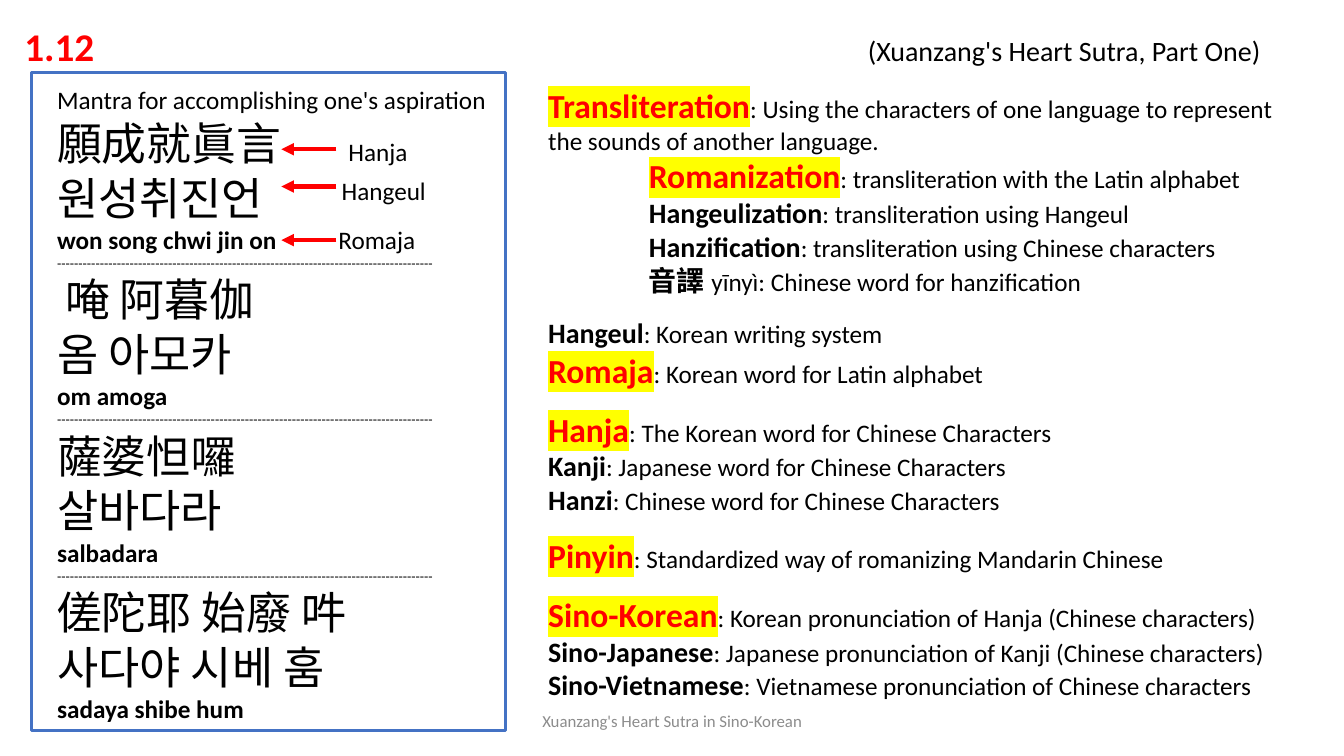
from dataclasses import dataclass, field

from pptx import Presentation
from pptx import util as u
from pptx.dml.color import RGBColor
from pptx.enum import shapes, text
from pptx.oxml import parse_xml
from pptx.oxml.ns import nsdecls, qn

NUMBER = "1.12"
SERIES = "(Xuanzang's Heart Sutra, Part One)"
FOOTER = "Xuanzang's Heart Sutra in Sino-Korean"

MANTRA_HEADING = "Mantra for accomplishing one's aspiration"
VERSES = [
    ("願成就眞言", "원성취진언", "won song chwi jin on", 0),
    ("唵 阿暮伽", "옴 아모카", "om amoga", 0.2),
    ("薩婆怛囉", "살바다라", "salbadara", 0),
    ("傞陀耶 始廢 吽", "사다야 시베 훔", "sadaya shibe hum", 0),
]
DIVIDER = "-" * 88

SCRIPTS = [
    ("Hanja", 8.53, 3.3, 3.76),
    ("Hangeul", 8.36, 4.29, 4.7),
    ("Romaja", 8.28, 5.53, 6.05),
]

GLOSSARY = [
    [
        ("key", "Transliteration", ": Using the characters of one language to represent "
         "the sounds of another language.", 0),
        ("key", "Romanization", ": transliteration with the Latin alphabet", 2.54),
        ("term", "Hangeulization", ": transliteration using Hangeul", 2.54),
        ("term", "Hanzification", ": transliteration using Chinese characters", 2.54),
        ("hanzi", "音譯 ", "yīnyì: Chinese word for hanzification", 2.54),
    ],
    [
        ("term", "Hangeul", ": Korean writing system", 0),
        ("key", "Romaja", ": Korean word for Latin alphabet", 0),
    ],
    [
        ("key", "Hanja", ": The Korean word for Chinese Characters", 0),
        ("term", "Kanji", ": Japanese word for Chinese Characters", 0),
        ("term", "Hanzi", ": Chinese word for Chinese Characters", 0),
    ],
    [("key", "Pinyin", ": Standardized way of romanizing Mandarin Chinese", 0)],
    [
        ("key", "Sino-Korean", ": Korean pronunciation of Hanja (Chinese characters)", 0),
        ("term", "Sino-Japanese", ": Japanese pronunciation of Kanji (Chinese characters)", 0),
        ("term", "Sino-Vietnamese", ": Vietnamese pronunciation of Chinese characters", 0),
    ],
]


@dataclass
class Style:
    size: int
    bold: bool = False
    color: str = "000000"
    highlight: str = ""
    cjk: bool = False


@dataclass
class Theme:
    latin: str = "Calibri"
    cjk: str = "Noto Sans CJK SC"
    frame: str = "4472C4"
    arrow: str = "FF0000"
    line_height: float = 1.22
    group_gap: float = 13.4
    styles: dict = field(default_factory=lambda: {
        "number": Style(28, True, "FF0000"),
        "series": Style(20),
        "footer": Style(12, color="8C8C8C"),
        "plain": Style(18),
        "reading": Style(18, True),
        "verse": Style(32, cjk=True),
        "divider": Style(10),
        "key": Style(24, True, "FF0000", "FFFF00"),
        "term": Style(20, True),
        "hanzi": Style(20, True, cjk=True),
    })


THEME = Theme()


def format_run(run, style):
    font = run.font
    font.size, font.bold = u.Pt(style.size), style.bold
    font.color.rgb = RGBColor.from_string(style.color)
    font.name = THEME.cjk if style.cjk else THEME.latin
    latin = run._r.rPr.find(qn("a:latin"))
    latin.addnext(parse_xml(f'<a:ea {nsdecls("a")} typeface="{THEME.cjk}"/>'))
    if style.highlight:
        latin.addprevious(parse_xml(
            f'<a:highlight {nsdecls("a")}><a:srgbClr val="{style.highlight}"/></a:highlight>'))


def write(holder, lines, anchor=text.MSO_ANCHOR.TOP, align=text.PP_ALIGN.LEFT):
    frame = holder.text_frame
    frame.word_wrap = True
    frame.auto_size = text.MSO_AUTO_SIZE.NONE
    frame.vertical_anchor = anchor
    for index, (runs, indent, gap) in enumerate(lines):
        paragraph = frame.add_paragraph() if index else frame.paragraphs[0]
        paragraph.alignment = align
        properties = paragraph._p.get_or_add_pPr()
        properties.set("marL", str(u.Cm(indent)))
        properties.set("indent", "0")
        properties.append(parse_xml(f'<a:buNone {nsdecls("a")}/>'))
        paragraph.space_before = u.Pt(gap)
        for words, name in runs:
            style = THEME.styles[name]
            run = paragraph.add_run()
            run.text = words
            format_run(run, style)
            if style.cjk:
                paragraph.line_spacing = u.Pt(style.size * THEME.line_height)


def place(holder, left, top, width, height):
    holder.left, holder.top = u.Cm(left), u.Cm(top)
    holder.width, holder.height = u.Cm(width), u.Cm(height)


def line(words, style, indent=0):
    return [(words, style)], indent, 0


def mantra_lines():
    lines = [line(MANTRA_HEADING, "plain")]
    for index, (hanja, hangeul, romaja, indent) in enumerate(VERSES):
        if index:
            lines.append(line(DIVIDER, "divider"))
        lines += [line(hanja, "verse", indent), line(hangeul, "verse"),
                  line(romaja, "reading")]
    return lines


def glossary_lines():
    return [
        ([(term, style), (meaning, "plain")], indent,
         THEME.group_gap if group and not row else 0)
        for group, entries in enumerate(GLOSSARY)
        for row, (style, term, meaning, indent) in enumerate(entries)
    ]


def add_words(slide, box, lines, **layout):
    write(slide.shapes.add_textbox(*map(u.Cm, box)), lines, **layout)


def add_arrow(slide, height):
    arrow = slide.shapes.add_connector(
        shapes.MSO_CONNECTOR.STRAIGHT, u.Cm(8.48), u.Cm(height), u.Cm(7.09), u.Cm(height))
    arrow.line.color.rgb = RGBColor.from_string(THEME.arrow)
    arrow.line.width = u.Pt(3)
    arrow.line._get_or_add_ln().append(
        parse_xml(f'<a:tailEnd {nsdecls("a")} type="triangle"/>'))
    arrow._element.spPr.append(parse_xml(f'<a:effectLst {nsdecls("a")}/>'))


def main():
    deck = Presentation()
    deck.slide_width, deck.slide_height = u.Cm(33.87), u.Cm(19.05)
    slide = deck.slides.add_slide(deck.slide_layouts[1])

    number, glossary = slide.shapes.title, slide.placeholders[1]
    place(number, 0.36, 0.36, 6, 1.47)
    write(number, [line(NUMBER, "number")])
    number.text_frame.paragraphs[0].line_spacing = 1.07
    place(glossary, 13.56, 2.01, 19.51, 16.08)
    write(glossary, glossary_lines())

    add_words(slide, (21.62, 0.71, 11.4, 1.02), [line(SERIES, "series")])
    add_words(slide, (11.23, 17.65, 11.43, 1.02), [line(FOOTER, "footer")],
              anchor=text.MSO_ANCHOR.MIDDLE, align=text.PP_ALIGN.CENTER)
    add_words(slide, (1.19, 2.01, 11.96, 16.87), mantra_lines())

    border = slide.shapes.add_shape(
        shapes.MSO_SHAPE.RECTANGLE, *map(u.Cm, (0.79, 1.83, 11.96, 16.59)))
    border.shadow.inherit = False
    border.fill.background()
    border.line.color.rgb = RGBColor.from_string(THEME.frame)
    border.line.width = u.Pt(2.25)

    for script, left, top, arrow_height in SCRIPTS:
        add_arrow(slide, arrow_height)
        add_words(slide, (left, top, 2.84, 1.02), [line(script, "plain")])

    deck.save("out.pptx")


if __name__ == "__main__":
    main()
